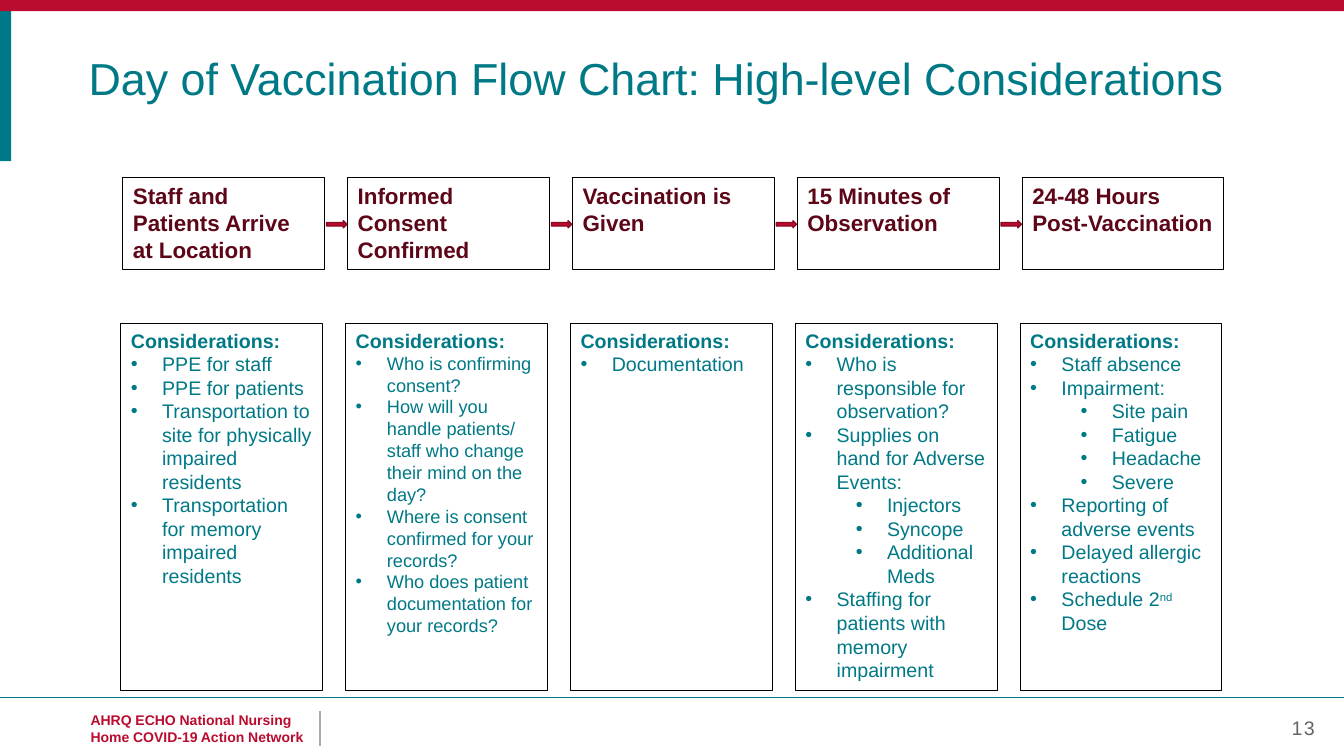
from lxml import etree
from pptx import Presentation
from pptx.dml.color import RGBColor
from pptx.enum.shapes import MSO_CONNECTOR, MSO_SHAPE
from pptx.enum.text import MSO_ANCHOR, PP_ALIGN
from pptx.oxml.ns import qn
from pptx.util import Inches, Pt

RECT, ARROW = MSO_SHAPE.RECTANGLE, MSO_SHAPE.RIGHT_ARROW
LINE = MSO_CONNECTOR.STRAIGHT
TOP, MID = MSO_ANCHOR.TOP, MSO_ANCHOR.MIDDLE
LEFT, RIGHT = PP_ALIGN.LEFT, PP_ALIGN.RIGHT
WIDE, HIGH = 13.33, 7.5
TEAL, RED, WINE = "007986", "BA0C2F", "5D0618"
COL, GAP = 2, 0.23

STEPS = [
    ("Staff and Patients Arrive at Location", 14, [
        (0, "PPE for staff"), (0, "PPE for patients"),
        (0, "Transportation to site for physically impaired residents"),
        (0, "Transportation for memory impaired residents")]),
    ("Informed Consent Confirmed", 13, [
        (0, "Who is confirming consent?"),
        (0, "How will you handle patients/ staff who change their mind on the day?"),
        (0, "Where is consent confirmed for your records?"),
        (0, "Who does patient documentation for your records?")]),
    ("Vaccination is Given", 14, [(0, "Documentation")]),
    ("15 Minutes of Observation", 14, [
        (0, "Who is responsible for observation?"),
        (0, "Supplies on hand for Adverse Events:"),
        (1, "Injectors"), (1, "Syncope"), (1, "Additional Meds"),
        (0, "Staffing for patients with memory impairment")]),
    ("24-48 Hours Post-Vaccination", 14, [
        (0, "Staff absence"), (0, "Impairment:"),
        (1, "Site pain"), (1, "Fatigue"), (1, "Headache"), (1, "Severe"),
        (0, "Reporting of adverse events"), (0, "Delayed allergic reactions"),
        (0, "Schedule 2", "nd", " Dose")]),
]


def paint(text):
    """Turn a hex string into a colour."""
    return RGBColor.from_string(text)


def block(slide, kind, box, fill=None, edge=None, width=0.75):
    """Add a preset shape with a plain fill and outline."""
    shape = slide.shapes.add_shape(kind, *map(Inches, box))
    shape.shadow.inherit = False
    if fill:
        shape.fill.solid()
        shape.fill.fore_color.rgb = paint(fill)
    else:
        shape.fill.background()
    if edge:
        shape.line.color.rgb = paint(edge)
        shape.line.width = Pt(width)
    else:
        shape.line.fill.background()
    return shape


def rule(slide, start, end, color, width):
    """Draw a straight line without a shadow."""
    line = slide.shapes.add_connector(LINE, *map(Inches, start + end))
    line.line.color.rgb = paint(color)
    line.line.width = Pt(width)
    etree.SubElement(line._element.spPr, qn("a:effectLst"))


def frame(shape, anchor=TOP):
    """Prepare the text frame of a shape."""
    body = shape.text_frame
    body.word_wrap = True
    body.vertical_anchor = anchor
    return body


def label(slide, box, anchor=TOP):
    """Add a text box and return its frame."""
    return frame(slide.shapes.add_textbox(*map(Inches, box)), anchor)


def write(para, text, size, color, bold=False, **marks):
    """Add one run, with any further run marks."""
    run = para.add_run()
    run.text = text
    run.font.name = "Arial"
    run.font.size = Pt(size)
    run.font.bold = bold
    run.font.color.rgb = paint(color)
    for key, value in marks.items():
        run._r.get_or_add_rPr().set(key, value)


def bullet(para, level):
    """Give a paragraph a hanging bullet."""
    para.level = level
    para.alignment = LEFT
    props = para._p.get_or_add_pPr()
    props.set("marL", str(Inches(0.31 + 0.5 * level)))
    props.set("indent", str(-Inches(0.31)))
    etree.SubElement(props, qn("a:buFont")).set("typeface", "Arial")
    etree.SubElement(props, qn("a:buChar")).set("char", "•")


def header(slide, box):
    """Place the edge bars and the title."""
    x, y, w, h = box
    block(slide, RECT, (x, y, 0.11, h), TEAL)
    block(slide, RECT, (x, y, w, 0.11), RED)
    para = label(slide, (x + 0.78, y + 0.53, 11.84, 0.55), MID).paragraphs[0]
    para.line_spacing = 0.9
    write(para, "Day of Vaccination Flow Chart: High-level Considerations", 32, TEAL)


def footer(slide, box):
    """Place the rule, the network name and the page number."""
    x, y, w, h = box
    rule(slide, (x, y), (x + w, y), TEAL, 0.5)
    para = label(slide, (x + 8.17, y + 0.13, 4.97, 0.34)).paragraphs[0]
    para.alignment = RIGHT
    write(para, "13", 14, "636669", spc="100")
    body = label(slide, (x + 0.8, y + 0.09, 3.5, 0.44))
    write(body.paragraphs[0], "AHRQ ECHO National Nursing", 10, RED, True)
    write(body.add_paragraph(), "Home COVID-19 Action Network", 10, RED, True)
    rule(slide, (x + 3.17, y + 0.13), (x + 3.17, y + h - 0.1), "AFABAB", 1.5)


def step(slide, box, name):
    """Place one step of the flow."""
    para = frame(block(slide, RECT, box, edge="000000")).paragraphs[0]
    para.alignment = LEFT
    write(para, name, 16, WINE, True)


def notes(slide, box, size, items):
    """Place the considerations of one step."""
    body = frame(block(slide, RECT, box, edge="000000"))
    body.paragraphs[0].alignment = LEFT
    write(body.paragraphs[0], "Considerations:", 14, TEAL, True)
    for level, text, *rest in items:
        para = body.add_paragraph()
        bullet(para, level)
        write(para, text, size, TEAL)
        if rest:
            write(para, rest[0], size, TEAL, baseline="30000")
            write(para, rest[1], size, TEAL)


def flow(slide, box):
    """Place steps, arrows and considerations in equal columns."""
    x, y, w, h = box
    pitch = (w + GAP) / len(STEPS)
    for i, (name, size, items) in enumerate(STEPS):
        left = x + i * pitch
        step(slide, (left + 0.02, y, COL, 0.91), name)
        notes(slide, (left, y + 1.45, COL, h - 1.45), size, items)
        if i:
            block(slide, ARROW, (left - GAP + 0.04, y + 0.43, 0.2, 0.07),
                  RED, "8A0923", 1)


def main():
    """Build and save the slide."""
    deck = Presentation()
    deck.slide_width, deck.slide_height = Inches(WIDE), Inches(HIGH)
    slide = deck.slides.add_slide(deck.slide_layouts[6])
    header(slide, (0, 0, WIDE, 1.6))
    footer(slide, (0, 6.92, WIDE, HIGH - 6.92))
    flow(slide, (1.2, 1.76, 10.92, 5.09))
    deck.save("out.pptx")


if __name__ == "__main__":
    main()
